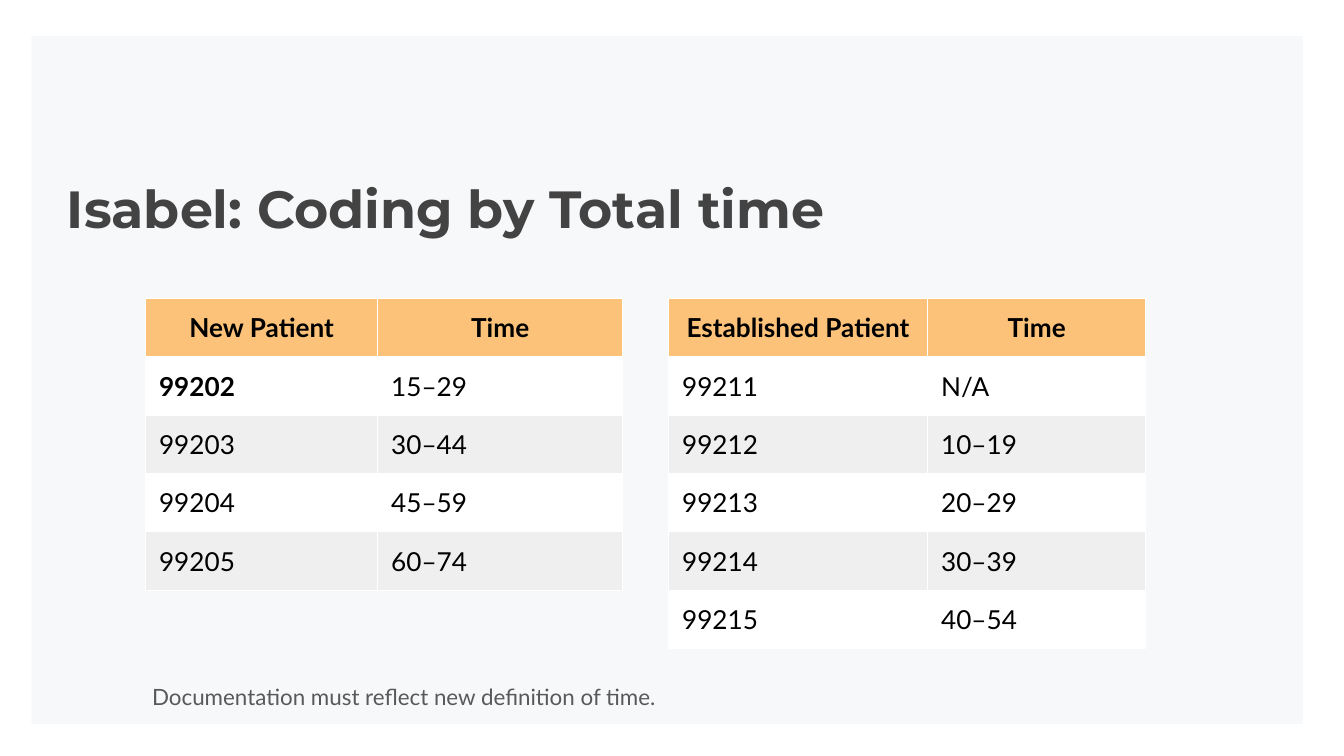
import pptx
import pptx.dml.color
import pptx.enum.shapes
import pptx.enum.text
import pptx.oxml
import pptx.oxml.ns
import pptx.util

Pt = pptx.util.Pt
RGBColor = pptx.dml.color.RGBColor
PP_ALIGN = pptx.enum.text.PP_ALIGN
qn = pptx.oxml.ns.qn

NAVY = RGBColor(0x07, 0x37, 0x63)
ORANGE = RGBColor(0xFF, 0xAB, 0x40)
WHITE = RGBColor(0xFF, 0xFF, 0xFF)
LIGHT_GRAY = RGBColor(0xEF, 0xEF, 0xEF)
TITLE_GRAY = RGBColor(0x43, 0x43, 0x43)
NOTE_GRAY = RGBColor(0x59, 0x59, 0x59)
BLACK = RGBColor(0, 0, 0)

INSET = Pt(7.2)
ROW_HEIGHT = 31.2
MARGINS = {"margin_left": INSET, "margin_top": INSET, "margin_right": INSET, "margin_bottom": INSET}
TITLE_FONT = {"name": "Montserrat", "size": Pt(28), "bold": True}
NOTE_FONT = {"name": "Lato", "size": Pt(12), "bold": False}
CELL_FONT = {"name": "Lato", "size": Pt(14)}


def fill_solid(fill, color, opacity=100):
    fill.solid()
    fill.fore_color.rgb = color
    if opacity < 100:
        color_element = fill._xPr.find(qn("a:solidFill")).find(qn("a:srgbClr"))
        pptx.oxml.ns.nsdecls("a")
        alpha = pptx.oxml.parse_xml(f'<a:alpha {pptx.oxml.ns.nsdecls("a")} val="{opacity * 1000}"/>')
        color_element.append(alpha)


def write_text(text_frame, text, font_values, color, paragraph_values):
    paragraph = text_frame.paragraphs[0]
    for name, value in paragraph_values.items():
        setattr(paragraph, name, value)
    run = paragraph.add_run()
    run.text = text
    for name, value in font_values.items():
        setattr(run.font, name, value)
    run.font.color.rgb = color


presentation = pptx.Presentation()
presentation.slide_width = Pt(720)
presentation.slide_height = Pt(405)
slide = presentation.slides.add_slide(presentation.slide_layouts[6])
fill_solid(slide.background.fill, WHITE)

panel = slide.shapes.add_shape(
    pptx.enum.shapes.MSO_SHAPE.RECTANGLE, Pt(16.8), Pt(19.3), Pt(681.2), Pt(368.6)
)
panel.shadow.inherit = False
panel.line.fill.background()
fill_solid(panel.fill, NAVY, 3)

text_boxes = [
    ((28.8, 87.1, 671, 45.4), "Isabel: Coding by Total time", TITLE_FONT, TITLE_GRAY, {}),
    (
        (74.4, 356.4, 585.4, 15.1),
        "Documentation must reflect new definition of time.",
        NOTE_FONT,
        NOTE_GRAY,
        {"line_spacing": 1.15, "space_after": Pt(16)},
    ),
]
for box, text, font_values, color, paragraph_values in text_boxes:
    text_frame = slide.shapes.add_textbox(*map(Pt, box)).text_frame
    for name, value in {**MARGINS, "word_wrap": True}.items():
        setattr(text_frame, name, value)
    write_text(text_frame, text, font_values, color, paragraph_values)

tables = [
    (
        78,
        (124.4, 131.2),
        [
            ("New Patient", "Time"),
            ("99202", "15–29"),
            ("99203", "30–44"),
            ("99204", "45–59"),
            ("99205", "60–74"),
        ],
    ),
    (
        358.2,
        (138.8, 116.8),
        [
            ("Established Patient", "Time"),
            ("99211", "N/A"),
            ("99212", "10–19"),
            ("99213", "20–29"),
            ("99214", "30–39"),
            ("99215", "40–54"),
        ],
    ),
]
for left, widths, rows in tables:
    table = slide.shapes.add_table(
        len(rows), len(widths), Pt(left), Pt(160), Pt(sum(widths)), Pt(ROW_HEIGHT * len(rows))
    ).table
    for name in ("first_row", "horz_banding"):
        setattr(table, name, False)
    for column, width in zip(table.columns, widths):
        column.width = Pt(width)
    for row_index, row in enumerate(rows):
        table.rows[row_index].height = Pt(ROW_HEIGHT)
        is_header = row_index == 0
        for column_index, text in enumerate(row):
            cell = table.cell(row_index, column_index)
            for name, value in MARGINS.items():
                setattr(cell, name, value)
            cell_properties = cell._tc.get_or_add_tcPr()
            for side in ("lnL", "lnR", "lnT", "lnB"):
                cell_properties.append(pptx.oxml.parse_xml(
                    f'<a:{side} {pptx.oxml.ns.nsdecls("a")} w="{Pt(0.75)}">'
                    f'<a:solidFill><a:srgbClr val="{WHITE}"/></a:solidFill></a:{side}>'
                ))
            if is_header:
                fill_solid(cell.fill, ORANGE, 69)
            else:
                fill_solid(cell.fill, WHITE if row_index % 2 else LIGHT_GRAY)
            font_values = {**CELL_FONT, "bold": is_header or text == "99202"}
            alignment = PP_ALIGN.CENTER if is_header else PP_ALIGN.LEFT
            write_text(cell.text_frame, text, font_values, BLACK, {"alignment": alignment})

presentation.save("out.pptx")
